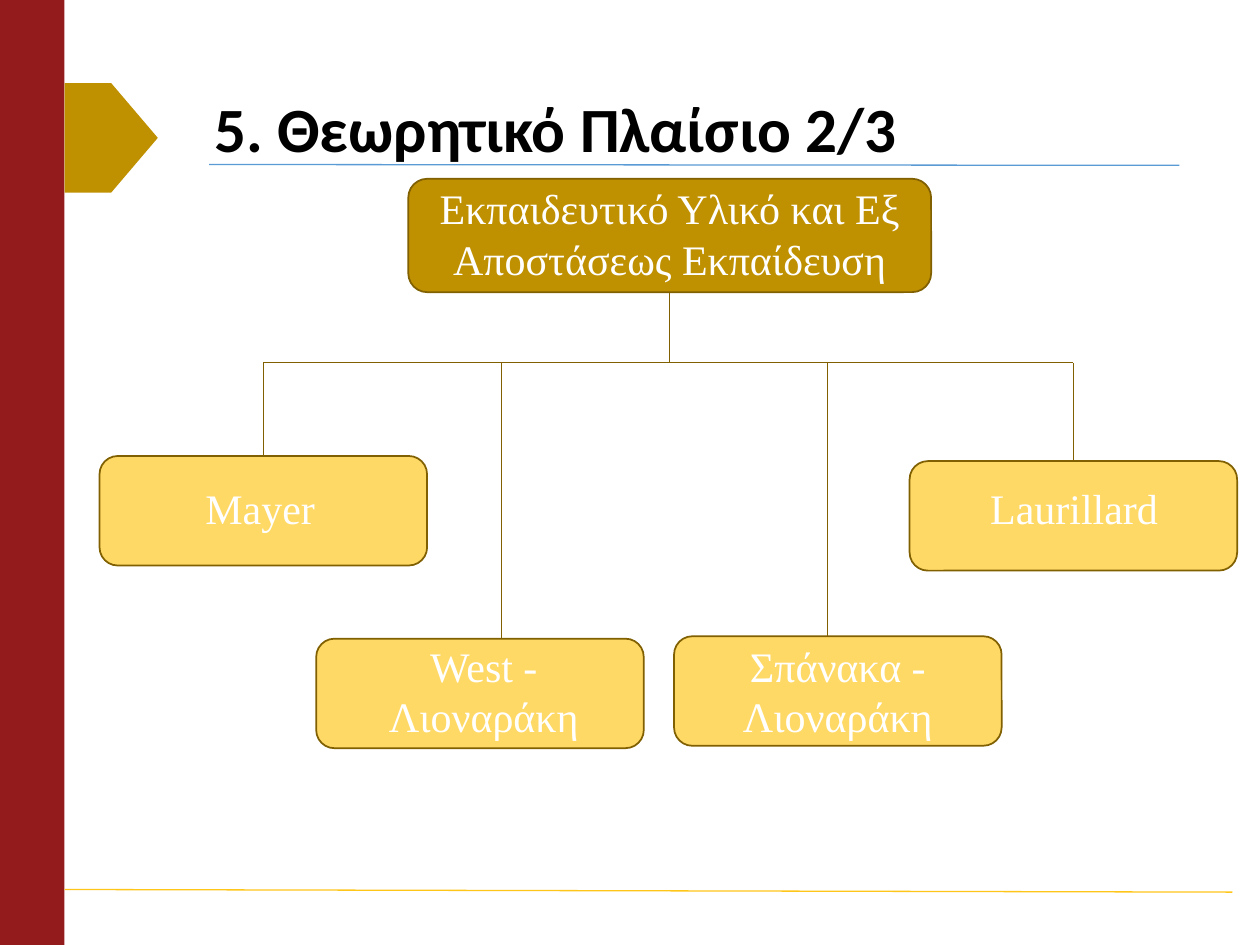
from typing import NamedTuple

from lxml.etree import SubElement
from pptx import Presentation
from pptx.dml.color import RGBColor
from pptx.enum.shapes import MSO_CONNECTOR as Connector, MSO_SHAPE as Shape
from pptx.enum.text import MSO_ANCHOR as Anchor, MSO_AUTO_SIZE as AutoSize, PP_ALIGN as Align
from pptx.oxml.ns import qn
from pptx.util import Pt

OCHRE = "BF9000"
SAND = "FFD966"
BROWN = "806000"
WHITE = "FFFFFF"


class Area(NamedTuple):
    left: float
    top: float
    width: float
    height: float


class Topic(NamedTuple):
    wording: str
    box: Area
    label: Area
    fill: str
    drop_x: float
    joined: bool


ROOT = Topic("Εκπαιδευτικό Υλικό και Εξ Αποστάσεως Εκπαίδευση",
             Area(233.3, 102.2, 298.8, 64.8), Area(219.6, 100.8, 326.2, 65.5),
             OCHRE, 382.7, True)
BOX_W, BOX_H = 187.2, 62.6
AUTHORS = [
    Topic("Mayer", Area(56.9, 260.6, BOX_W, BOX_H),
          Area(68.4, 272.2, 160.6, 36), SAND, 150.5, True),
    Topic("West - Λιοναράκη", Area(180.7, 365, BOX_W, BOX_H),
          Area(182.9, 362.2, BOX_W, 65.5), SAND, 286.6, False),
    Topic("Laurillard", Area(519.8, 263.5, BOX_W, BOX_H),
          Area(533.5, 272.2, 160.6, 36), SAND, 613.4, True),
    Topic("Σπάνακα - Λιοναράκη", Area(385.2, 363.6, BOX_W, BOX_H),
          Area(385.2, 362.2, BOX_W, 65.5), SAND, 473, False),
]
RAIL_Y = 207.4


def rgb(value: str) -> RGBColor:
    return RGBColor.from_string(value)


def points(area: Area) -> list:
    return [Pt(length) for length in area]


def add_block(slide, kind, area: Area, fill: str, outline: str | None = None):
    block = slide.shapes.add_shape(kind, *points(area))
    block.shadow.inherit = False
    block.fill.solid()
    block.fill.fore_color.rgb = rgb(fill)
    if outline:
        block.line.color.rgb = rgb(outline)
        block.line.width = Pt(1)
    else:
        block.line.fill.background()
    return block


def add_line(slide, x1: float, y1: float, x2: float, y2: float, color: str, width: float):
    line = slide.shapes.add_connector(Connector.STRAIGHT, Pt(x1), Pt(y1), Pt(x2), Pt(y2))
    line.line.color.rgb = rgb(color)
    line.line.width = Pt(width)
    SubElement(line._element.spPr, qn("a:effectLst"))
    return line


def format_font(paragraph, name: str, size: float, color: str, bold: bool = False) -> None:
    for run in paragraph.runs:
        run.font.name = name
        run.font.size = Pt(size)
        run.font.color.rgb = rgb(color)
        run.font.bold = bold


def add_topic(slide, topic: Topic):
    box = add_block(slide, Shape.ROUNDED_RECTANGLE, topic.box, topic.fill, BROWN)
    frame = slide.shapes.add_textbox(*points(topic.label)).text_frame
    frame.word_wrap = True
    frame.text = topic.wording
    frame.paragraphs[0].alignment = Align.CENTER
    format_font(frame.paragraphs[0], "Times New Roman", 24, WHITE)
    return box


def set_title(slide, wording: str, area: Area) -> None:
    title = slide.shapes.title
    title.left, title.top, title.width, title.height = points(area)
    frame = title.text_frame
    frame.text = wording
    frame.word_wrap = True
    frame.auto_size = AutoSize.NONE
    frame.vertical_anchor = Anchor.MIDDLE
    heading = frame.paragraphs[0]
    heading.alignment = Align.LEFT
    heading.line_spacing = 0.9
    format_font(heading, "Calibri", 36, "000000", True)


def main() -> None:
    deck = Presentation()
    deck.slide_width, deck.slide_height = Pt(720), Pt(540)
    slide = deck.slides.add_slide(deck.slide_layouts[5])

    add_block(slide, Shape.RECTANGLE, Area(0, 0, 36.9, 540), "931B1B")
    add_block(slide, Shape.PENTAGON, Area(36.9, 47.5, 53.3, 62.6), OCHRE)
    add_line(slide, 119.5, 94, 673.9, 94.5, "5B9BD5", 0.75)
    add_line(slide, 36.9, 508.3, 704.2, 509.8, "FFC61A", 0.75)
    set_title(slide, "5. Θεωρητικό Πλαίσιο 2/3", Area(115.2, 45.4, 566.6, 60.5))

    root_box = add_topic(slide, ROOT)
    stem = add_line(slide, ROOT.drop_x, ROOT.box.top + ROOT.box.height,
                    ROOT.drop_x, RAIL_Y, BROWN, 0.5)
    stem.begin_connect(root_box, 2)
    add_line(slide, AUTHORS[0].drop_x, RAIL_Y, AUTHORS[2].drop_x, RAIL_Y, BROWN, 0.5)

    for author in AUTHORS:
        author_box = add_topic(slide, author)
        drop = add_line(slide, author.drop_x, RAIL_Y, author.drop_x, author.box.top, BROWN, 0.5)
        if author.joined:
            drop.end_connect(author_box, 0)

    deck.save("out.pptx")


if __name__ == "__main__":
    main()
